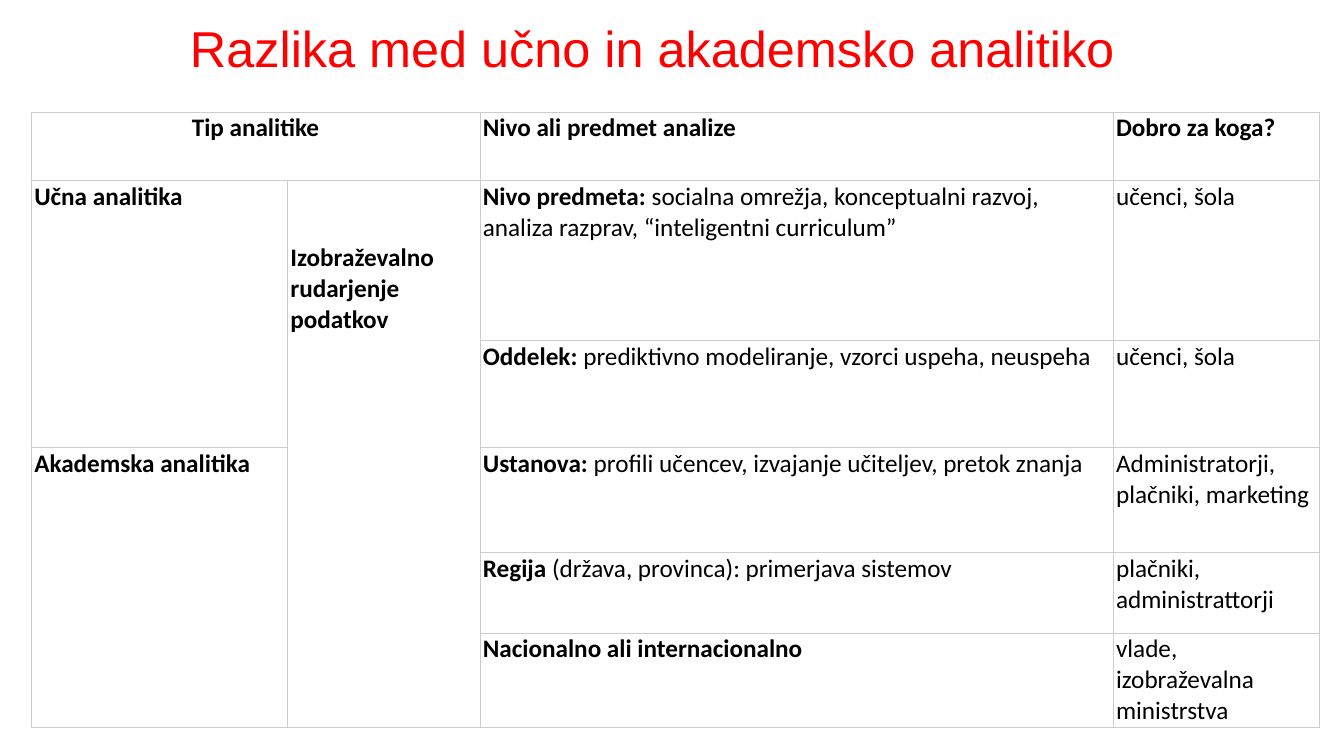
from lxml import etree
from pptx import Presentation
from pptx.dml.color import RGBColor
from pptx.enum.text import MSO_ANCHOR, PP_ALIGN
from pptx.oxml.ns import qn
from pptx.util import Inches, Pt

CENTER = PP_ALIGN.CENTER
LEFT = PP_ALIGN.LEFT
MIDDLE = MSO_ANCHOR.MIDDLE
TITLE_ONLY = 5

COLORS = {"title": "FF0000", "text": "000000", "cell": "FFFFFF", "border": "CCCCCC"}
TITLE_FONT = {"name": "Arial", "size": Pt(36), "bold": False}
TABLE_FONT = {"name": "Calibri", "size": Pt(18)}
CELL_MARGINS = {
    "margin_left": Inches(0.03),
    "margin_top": Inches(0.01),
    "margin_right": Inches(0.03),
    "margin_bottom": Inches(0.01),
}
BORDER_WIDTH = Pt(0.6)

COLUMN_WIDTHS = [2.54, 1.91, 6.28, 2.05]
ROW_HEIGHTS = [0.68, 1.59, 1.06, 1.04, 0.8, 0.93]
MERGES = [((0, 0), (0, 1)), ((1, 0), (2, 0)), ((1, 1), (5, 1)), ((3, 0), (5, 0))]
HEADINGS = {
    (0, 0): "Tip analitike",
    (0, 2): "Nivo ali predmet analize",
    (0, 3): "Dobro za koga?",
    (1, 0): "Učna analitika",
    (1, 1): "Izobraževalno rudarjenje podatkov",
    (3, 0): "Akademska analitika",
}
LEVELS = [
    ("Nivo predmeta:\u00a0".replace("\u00a0", " "),
     "socialna omrežja, konceptualni razvoj, analiza razprav, “inteligentni curriculum”",
     "učenci, šola"),
    ("Oddelek: ", "prediktivno modeliranje, vzorci uspeha, neuspeha", "učenci, šola"),
    ("Ustanova: ", "profili učencev, izvajanje učiteljev, pretok znanja",
     "Administratorji, plačniki, marketing"),
    ("Regija ", "(država, provinca): primerjava sistemov", "plačniki, administrattorji"),
    ("Nacionalno ali internacionalno", "", "vlade, izobraževalna ministrstva"),
]


def set_values(target, values):
    for name, value in values.items():
        setattr(target, name, value)


class SlideBuilder:
    def __init__(self, deck):
        self.page = deck.slides.add_slide(deck.slide_layouts[TITLE_ONLY])

    def span(self, para, text, font, color):
        span = para.add_run()
        span.text = text
        set_values(span.font, font)
        span.font.color.rgb = RGBColor.from_string(COLORS[color])

    def title(self, text, left, top, width, height):
        box = self.page.shapes.title
        set_values(box, {"left": Inches(left), "top": Inches(top),
                         "width": Inches(width), "height": Inches(height)})
        box.text_frame.vertical_anchor = MIDDLE
        para = box.text_frame.paragraphs[0]
        set_values(para, {"alignment": CENTER, "line_spacing": 0.9})
        self.span(para, text, TITLE_FONT, "title")

    def table(self, left, top):
        frame = self.page.shapes.add_table(
            len(ROW_HEIGHTS), len(COLUMN_WIDTHS), Inches(left), Inches(top),
            Inches(sum(COLUMN_WIDTHS)), Inches(sum(ROW_HEIGHTS)))
        table = frame.table
        set_values(table, {"first_row": False, "horz_banding": False})
        for column, width in zip(table.columns, COLUMN_WIDTHS):
            column.width = Inches(width)
        for row, height in zip(table.rows, ROW_HEIGHTS):
            row.height = Inches(height)
        for cell in table.iter_cells():
            self.cell_style(cell)
        for first, last in MERGES:
            table.cell(*first).merge(table.cell(*last))
        return table

    def cell_style(self, cell):
        set_values(cell, CELL_MARGINS)
        cell.fill.solid()
        cell.fill.fore_color.rgb = RGBColor.from_string(COLORS["cell"])
        properties = cell._tc.get_or_add_tcPr()
        for position, side in enumerate(("lnL", "lnR", "lnT", "lnB")):
            line = etree.Element(qn(f"a:{side}"), w=str(int(BORDER_WIDTH)))
            fill = etree.SubElement(line, qn("a:solidFill"))
            etree.SubElement(fill, qn("a:srgbClr"), val=COLORS["border"])
            properties.insert(position, line)

    def cell_text(self, cell, bold_text="", plain_text="", alignment=LEFT):
        para = cell.text_frame.paragraphs[0]
        para.alignment = alignment
        for text, bold in ((bold_text, True), (plain_text, False)):
            if text:
                self.span(para, text, {**TABLE_FONT, "bold": bold}, "text")


def main():
    deck = Presentation()
    set_values(deck, {"slide_width": Inches(13.33), "slide_height": Inches(7.5)})
    builder = SlideBuilder(deck)
    builder.title("Razlika med učno in akademsko analitiko", 0.72, -0.1, 11.5, 1.21)
    table = builder.table(0.31, 1.11)
    for place, heading in HEADINGS.items():
        alignment = CENTER if place == (0, 0) else LEFT
        builder.cell_text(table.cell(*place), heading, alignment=alignment)
    table.cell(1, 1).margin_top = Inches(0.62)
    for row, (level, detail, audience) in enumerate(LEVELS, start=1):
        builder.cell_text(table.cell(row, 2), level, detail)
        builder.cell_text(table.cell(row, 3), plain_text=audience)
    deck.save("out.pptx")


if __name__ == "__main__":
    main()
